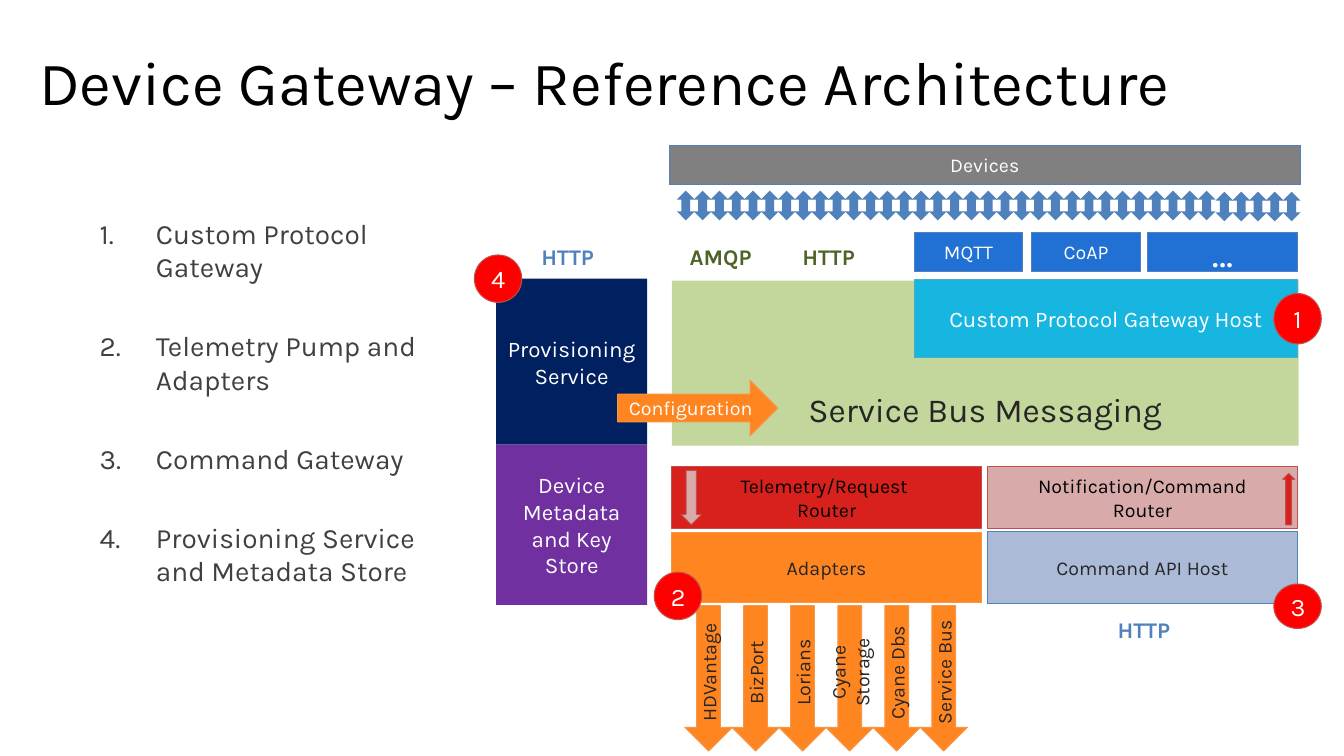
"""Build the device gateway reference architecture slide."""
from lxml import etree
from pptx import Presentation
from pptx.dml.color import RGBColor
from pptx.enum.shapes import MSO_SHAPE
from pptx.enum.text import MSO_ANCHOR, PP_ALIGN
from pptx.util import Inches, Pt

RECT, OVAL, CORNER = MSO_SHAPE.RECTANGLE, MSO_SHAPE.OVAL, MSO_SHAPE.CORNER
DOWN, UP, RIGHT, BOTH = (MSO_SHAPE.DOWN_ARROW, MSO_SHAPE.UP_ARROW,
                         MSO_SHAPE.RIGHT_ARROW, MSO_SHAPE.UP_DOWN_ARROW)
TOP, MIDDLE = MSO_ANCHOR.TOP, MSO_ANCHOR.MIDDLE
LEFT, CENTER = PP_ALIGN.LEFT, PP_ALIGN.CENTER

THEME = {
    "font": "Karla",
    "size": {"title": 44.9, "bus": 24.5, "list": 20.4, "badge": 18.4,
             "large": 16.3, "small": 14.3, "dots": 28.6},
    "color": {"black": "000000", "dark": "262626", "body": "404040", "white": "FFFFFF",
              "gray": "808080", "blue": "4F81BD", "royal": "2071D3", "cyan": "17B6E0",
              "aqua": "4BACC6", "navy": "002060", "purple": "7030A0", "steel": "AABAD7",
              "lime": "C3D69B", "moss": "4F6228", "red": "D8211C", "rose": "D9AAAA",
              "brick": "C0504D", "alert": "FF0000", "orange": "FF8521", "amber": "F79646"},
}

TITLE = "Device Gateway – Reference Architecture"
TOPICS = ["Custom Protocol Gateway", "Telemetry Pump and Adapters",
          "Command Gateway", "Provisioning Service and Metadata Store"]

BLOCKS = [
    (CORNER, (6.8, 2.84, 6.34, 1.67), "lime", None, "Service Bus Messaging", "bus", "dark"),
    (RECT, (9.25, 2.83, 3.88, 0.79), "cyan", "aqua",
     "Custom Protocol Gateway Host", "large", "white"),
    (RECT, (9.25, 2.35, 1.1, 0.4), "royal", "blue", "MQTT", "small", "white"),
    (RECT, (10.44, 2.35, 1.1, 0.4), "royal", "blue", "CoAP", "small", "white"),
    (RECT, (11.61, 2.35, 1.52, 0.4), "royal", "blue", "…", "dots", "white"),
    (RECT, (6.8, 4.72, 3.13, 0.63), "red", "brick",
     "Telemetry/Request \nRouter", "small", "black"),
    (RECT, (9.99, 4.72, 3.14, 0.63), "rose", "brick",
     "Notification/Command\nRouter", "small", "black"),
    (DOWN, (6.89, 4.76, 0.21, 0.55), "rose", "brick"),
    (UP, (12.98, 4.79, 0.12, 0.52), "red", "brick"),
    (RECT, (6.8, 5.39, 3.13, 0.71), "orange", "amber", "Adapters", "small", "dark"),
    (RECT, (9.99, 5.38, 3.14, 0.73), "steel", "blue", "Command API Host", "small", "dark"),
    (RECT, (5.02, 2.82, 1.53, 1.68), "navy", None, "Provisioning Service", "large", "white"),
    (RECT, (5.02, 4.5, 1.53, 1.62), "purple", None,
     "Device Metadata and Key Store", "large", "white"),
    (RECT, (6.77, 1.47, 6.39, 0.4), "gray", "blue", "Devices", "small", "white"),
    (RIGHT, (6.25, 3.85, 1.62, 0.56), "orange", "amber", "Configuration", "small", "white"),
]
TARGETS = ["HDVantage", "BizPort", "Lorians", "Cyane Storage", "Cyane Dbs", "Service Bus"]
LABELS = [("HTTP", 11.21, 6.19, 0.81, "blue"), ("HTTP", 5.38, 2.41, 0.81, "blue"),
          ("AMQP", 6.88, 2.41, 0.91, "moss"), ("HTTP", 8.02, 2.41, 0.81, "moss")]
BADGES = [(12.89, 2.97, 0.51), (6.62, 5.79, 0.48), (12.89, 5.91, 0.45), (4.8, 2.58, 0.48)]
LINKS, SHIFT = 37, 32


def paint(name):
    return RGBColor.from_string(THEME["color"][name])


def apply(item, form):
    for key, value in form.items():
        setattr(item, key, value)


def write(shape, text, size, color, align=CENTER, anchor=MIDDLE, bold=False):
    frame = shape.text_frame
    frame.text = text
    apply(frame, {"word_wrap": True, "vertical_anchor": anchor})
    form = {"name": THEME["font"], "size": Pt(THEME["size"][size]), "bold": bold}
    for para in frame.paragraphs:
        para.alignment = align
        for run in para.runs:
            apply(run.font, form)
            run.font.color.rgb = paint(color)
    return frame


def draw(slide, kind, box, fill, line=None, text="", size="small", color="dark"):
    shape = slide.shapes.add_shape(kind, *map(Inches, box))
    shape.shadow.inherit = False
    shape.fill.solid()
    shape.fill.fore_color.rgb = paint(fill)
    if line:
        shape.line.color.rgb = paint(line)
        shape.line.width = Pt(0.75)
    else:
        shape.line.fill.background()
    if text:
        write(shape, text, size, color)
    return shape


def label(slide, box, *args, **form):
    return write(slide.shapes.add_textbox(*map(Inches, box)), *args, align=LEFT, **form)


def number(frame):
    for index, para in enumerate(frame.paragraphs):
        para.space_before = Pt(33 if index else 0)
        props = para._p.get_or_add_pPr()
        props.set("marL", str(Inches(0.57)))
        props.set("indent", str(-Inches(0.57)))
        space = props.nsmap["a"]
        etree.SubElement(props, f"{{{space}}}buFont", typeface=THEME["font"])
        etree.SubElement(props, f"{{{space}}}buAutoNum", type="arabicPeriod")


def main():
    deck = Presentation()
    apply(deck, {"slide_width": Inches(13.6), "slide_height": Inches(7.65)})
    slide = deck.slides.add_slide(deck.slide_layouts[6])

    label(slide, (0.3, 0.32, 13, 1), TITLE, "title", "black")
    number(label(slide, (0.91, 2.14, 3.72, 4.85), "\n".join(TOPICS),
                 "list", "body", anchor=TOP))

    for block in BLOCKS:
        shape = draw(slide, *block)
        if block[0] == CORNER:
            shape.adjustments[0], shape.adjustments[1] = 0.44, 3.82

    for index, name in enumerate(TARGETS):
        arrow = draw(slide, DOWN, (6.93 + 0.476 * index, 6.13, 0.48, 1.47),
                     "orange", "amber", name)
        arrow.text_frame._txBody.bodyPr.set("vert", "vert270")

    for index in range(LINKS):
        drop = 0.01 if index >= SHIFT else 0
        draw(slide, BOTH, (6.85 + 0.17 * index + drop, 1.93 + drop, 0.18, 0.3), "blue")

    for text, left, top, width, color in LABELS:
        label(slide, (left, top, width, 0.38), text, "large", color, anchor=TOP, bold=True)

    for index, (left, top, height) in enumerate(BADGES, 1):
        draw(slide, OVAL, (left, top, 0.48, height), "alert", "brick",
             str(index), "badge", "white")

    deck.save("out.pptx")


if __name__ == "__main__":
    main()
